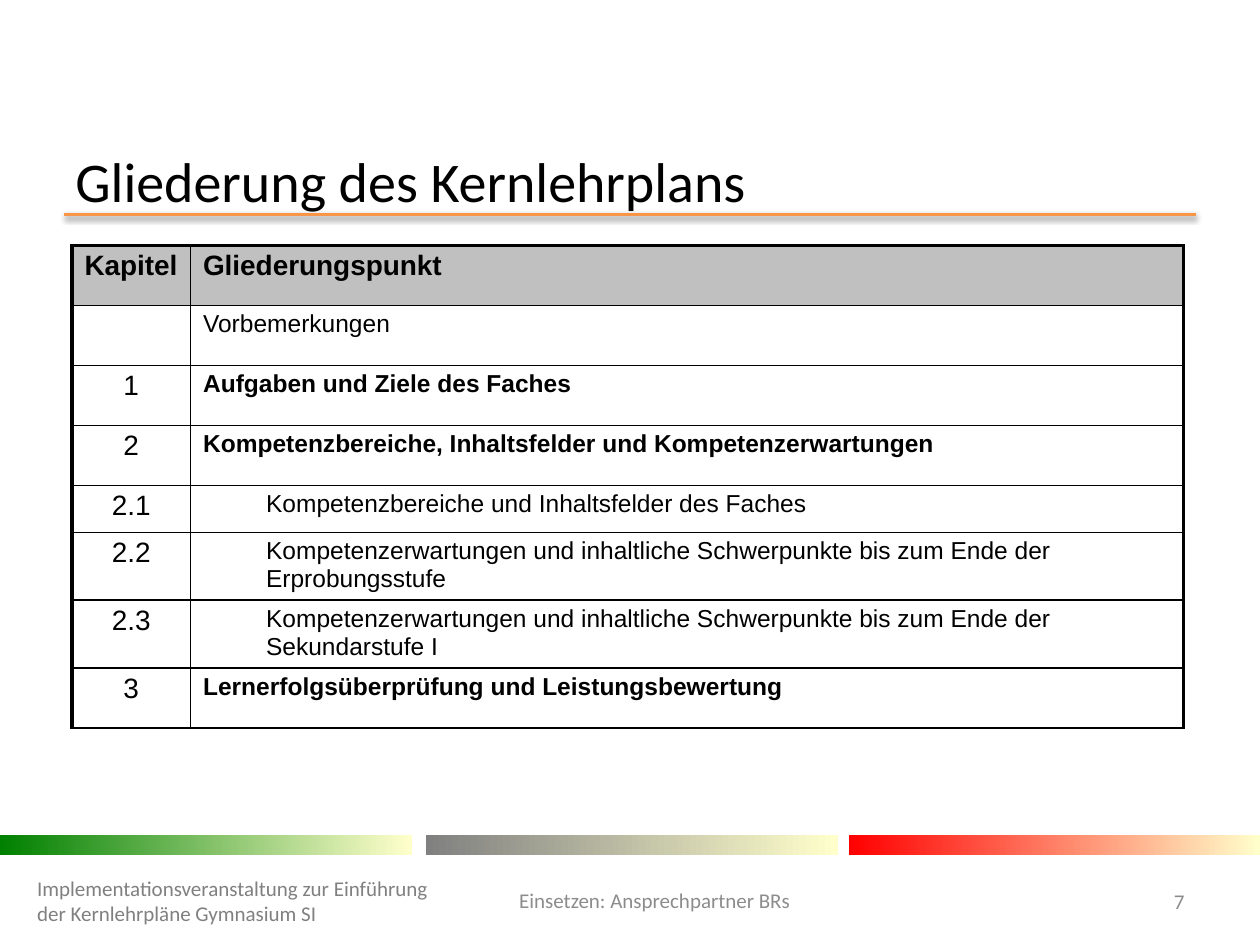
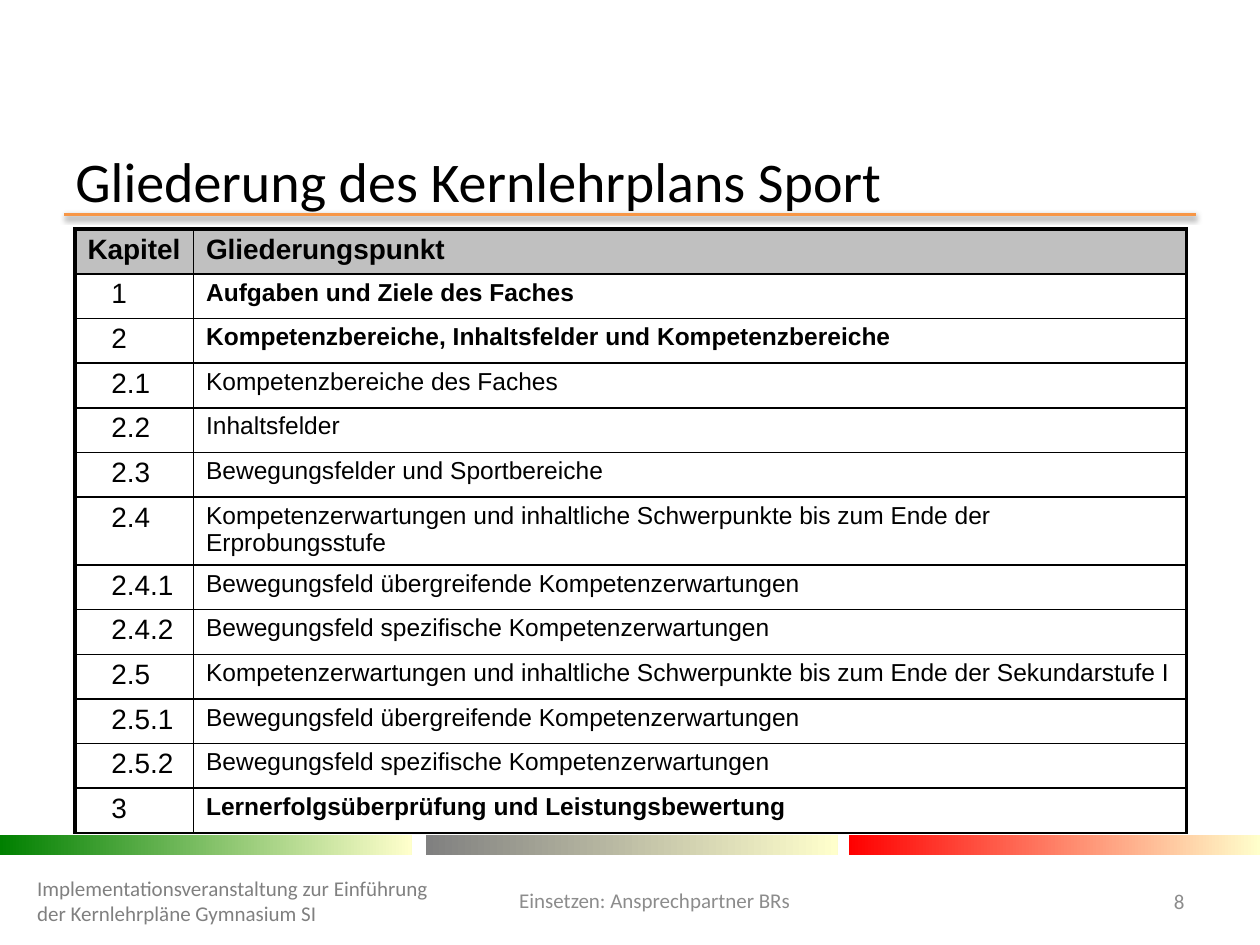
from dataclasses import dataclass

from lxml.etree import SubElement
from pptx import Presentation
from pptx.dml.color import RGBColor
from pptx.enum.shapes import MSO_CONNECTOR, MSO_SHAPE
from pptx.enum.text import MSO_ANCHOR, PP_ALIGN
from pptx.oxml.ns import qn
from pptx.util import Cm, Pt


@dataclass(frozen=True)
class Theme:
    text: str = "000000"
    accent: str = "F79646"
    header: str = "C0C0C0"
    footer: str = "808080"
    footer_light: str = "8C8C8C"
    band_starts: tuple = ("008000", "808080", "FF0000")
    band_end: str = "FFFFCC"
    heading_font: str = "Calibri"
    table_font: str = "Arial"
    title_size: int = 32
    footer_size: int = 12
    chapter_size: int = 16
    point_size: int = 14
    thin: float = 1
    thick: float = 2.25


theme = Theme()


def write(frame, text, font, size, color, align=PP_ALIGN.LEFT, bold=False, indent=0):
    frame.text = text
    frame.word_wrap = True
    para = frame.paragraphs[0]
    para.alignment = align
    properties = para._p.get_or_add_pPr()
    properties.set("marL", str(Cm(indent)))
    properties.set("indent", "0")
    para.font.size = Pt(size)
    for span in para.runs:
        span.font.name = font
        span.font.size = Pt(size)
        span.font.bold = bold
        span.font.color.rgb = RGBColor.from_string(color)


def add_border(cell, side, width):
    line = SubElement(cell._tc.get_or_add_tcPr(), qn(f"a:ln{side}"), w=str(Pt(width)))
    fill = SubElement(line, qn("a:solidFill"))
    SubElement(fill, qn("a:srgbClr"), val=theme.text)


# Content: title, table position, row height, indents, special heights, rows
header = ("Kapitel", "Gliederungspunkt")
early_stage = ("Kompetenzerwartungen und inhaltliche Schwerpunkte "
               "bis zum Ende der Erprobungsstufe")
lower_secondary = ("Kompetenzerwartungen und inhaltliche Schwerpunkte "
                   "bis zum Ende der Sekundarstufe I")
general_field = "Bewegungsfeld übergreifende Kompetenzerwartungen"
specific_field = "Bewegungsfeld spezifische Kompetenzerwartungen"
tasks = ("1", "Aufgaben und Ziele des Faches")
assessment = ("3", "Lernerfolgsüberprüfung und Leistungsbewertung")

outlines = [
    dict(
        title="Gliederung des Kernlehrplans",
        left=1.45, top=4.95, row_height=1.21,
        heights={"2.1": 0.94, "2.2": 1.37, "2.3": 1.37},
        chapter_align=PP_ALIGN.CENTER, chapter_indent=0, point_indent=1.27,
        rows=[
            ("", "Vorbemerkungen"),
            tasks,
            ("2", "Kompetenzbereiche, Inhaltsfelder und Kompetenzerwartungen"),
            ("2.1", "Kompetenzbereiche und Inhaltsfelder des Faches"),
            ("2.2", early_stage),
            ("2.3", lower_secondary),
            assessment,
        ],
    ),
    dict(
        title="Gliederung des Kernlehrplans Sport",
        left=1.51, top=4.62, row_height=0.9,
        heights={"2.4": 1.37},
        chapter_align=PP_ALIGN.LEFT, chapter_indent=0.48, point_indent=0,
        rows=[
            tasks,
            ("2", "Kompetenzbereiche, Inhaltsfelder und Kompetenzbereiche"),
            ("2.1", "Kompetenzbereiche des Faches"),
            ("2.2", "Inhaltsfelder"),
            ("2.3", "Bewegungsfelder und Sportbereiche"),
            ("2.4", early_stage),
            ("2.4.1", general_field),
            ("2.4.2", specific_field),
            ("2.5", lower_secondary),
            ("2.5.1", general_field),
            ("2.5.2", specific_field),
            assessment,
        ],
    ),
]
column_widths = (2.39, 20.02)

deck = Presentation()
deck.slide_width, deck.slide_height = Cm(25.4), Cm(19.05)

for number, outline in enumerate(outlines, start=7):
    page = deck.slides.add_slide(deck.slide_layouts[6])

    # Title rule with a soft shadow
    rule = page.shapes.add_connector(
        MSO_CONNECTOR.STRAIGHT, Cm(1.3), Cm(4.32), Cm(24.1), Cm(4.32))
    rule.line.color.rgb = RGBColor.from_string(theme.accent)
    rule.line.width = Pt(2)
    effects = SubElement(rule._element.spPr, qn("a:effectLst"))
    shadow = SubElement(effects, qn("a:outerShdw"), blurRad=str(Pt(3.1)),
                        dist=str(Pt(1.6)), dir="5400000", rotWithShape="0")
    shadow_color = SubElement(shadow, qn("a:srgbClr"), val=theme.text)
    SubElement(shadow_color, qn("a:alpha"), val="38000")

    # Gradient bands above the footer
    for left, start in zip((0, 8.59, 17.11), theme.band_starts):
        band = page.shapes.add_shape(
            MSO_SHAPE.RECTANGLE, Cm(left), Cm(16.84), Cm(8.3), Cm(0.4))
        band.shadow.inherit = False
        band.line.fill.background()
        band.fill.gradient()
        band.fill.gradient_angle = 0
        for stop, color in zip(band.fill.gradient_stops, (start, theme.band_end)):
            stop.color.rgb = RGBColor.from_string(color)

    # Title and footers
    labels = [
        (outline["title"], (1.27, 3.14, 22.86, 1),
         theme.title_size, theme.text, PP_ALIGN.LEFT),
        ("Implementationsveranstaltung zur Einführung der Kernlehrpläne Gymnasium SI",
         (0.5, 17.65, 8.4, 1.02), theme.footer_size, theme.footer, PP_ALIGN.LEFT),
        ("Einsetzen: Ansprechpartner BRs", (9.5, 17.25, 7.4, 1.8),
         theme.footer_size, theme.footer_light, PP_ALIGN.CENTER),
        (str(number), (22.5, 17.65, 1.63, 1.02),
         theme.footer_size, theme.footer_light, PP_ALIGN.RIGHT),
    ]
    for text, place, size, color, align in labels:
        box = page.shapes.add_textbox(*map(Cm, place))
        box.text_frame.vertical_anchor = MSO_ANCHOR.MIDDLE
        write(box.text_frame, text, theme.heading_font, size, color, align)

    # Table of chapters
    rows = [header] + outline["rows"]
    heights = [outline["heights"].get(chapter, outline["row_height"])
               for chapter, point in rows]
    table = page.shapes.add_table(
        len(rows), 2, Cm(outline["left"]), Cm(outline["top"]),
        Cm(sum(column_widths)), Cm(sum(heights))).table
    table.first_row = table.horz_banding = False
    for column, width in zip(table.columns, column_widths):
        column.width = Cm(width)

    for row_index, (chapter, point) in enumerate(rows):
        table.rows[row_index].height = Cm(heights[row_index])
        is_header = row_index == 0
        is_section = "." in chapter
        is_main = chapter.isdigit()
        chapter_cell, point_cell = table.rows[row_index].cells

        # Borders come before the fill: thick at the left, top and right edges
        top_width = theme.thick if is_header else theme.thin
        for cell, left_width, right_width in (
                (chapter_cell, theme.thick, theme.thin),
                (point_cell, theme.thin, theme.thick)):
            cell.margin_top, cell.margin_bottom = Cm(0.1), Cm(0.08)
            for side, width in zip("LRTB", (left_width, right_width, top_width, theme.thin)):
                add_border(cell, side, width)
            if is_header:
                cell.fill.solid()
                cell.fill.fore_color.rgb = RGBColor.from_string(theme.header)
            else:
                cell.fill.background()

        write(chapter_cell.text_frame, chapter, theme.table_font, theme.chapter_size,
              theme.text, PP_ALIGN.LEFT if is_header else outline["chapter_align"],
              is_header, 0 if is_header else outline["chapter_indent"])
        write(point_cell.text_frame, point, theme.table_font,
              theme.chapter_size if is_header else theme.point_size, theme.text,
              bold=is_header or is_main,
              indent=outline["point_indent"] if is_section else 0)

deck.save("out.pptx")
